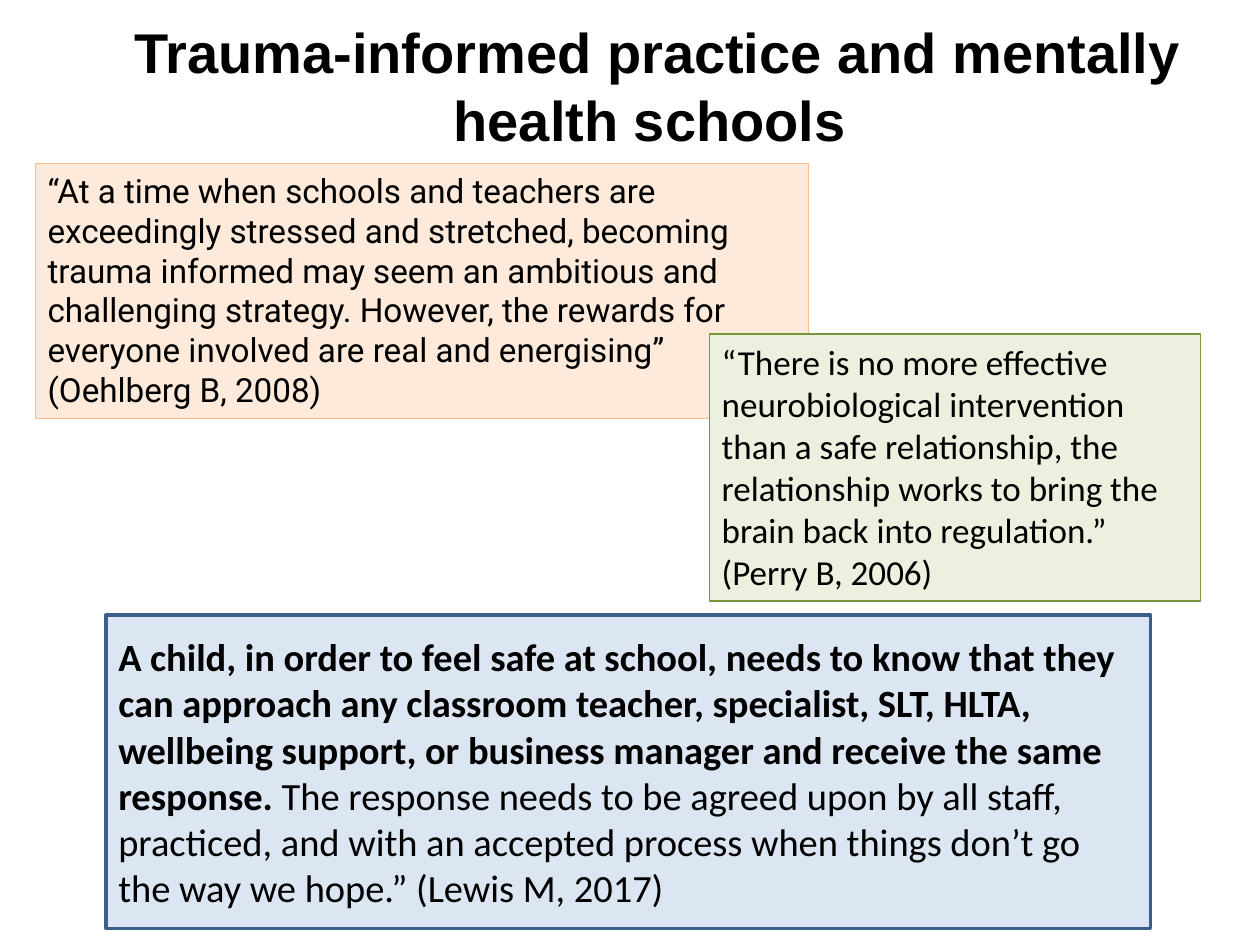
from pptx import Presentation
from pptx.dml.color import RGBColor
from pptx.enum.shapes import MSO_SHAPE
from pptx.enum.text import MSO_ANCHOR, PP_ALIGN
from pptx.util import Inches, Pt

RECTANGLE = MSO_SHAPE.RECTANGLE
TOP, MIDDLE = MSO_ANCHOR.TOP, MSO_ANCHOR.MIDDLE
LEFT, CENTER = PP_ALIGN.LEFT, PP_ALIGN.CENTER


def color(value):
    return RGBColor.from_string(value)


def write(box, paragraphs, font, size, align=LEFT, anchor=TOP):
    """Fill a box with paragraphs, each a list of (text, bold) spans."""
    frame = box.text_frame
    frame.word_wrap = True
    frame.vertical_anchor = anchor
    for index, spans in enumerate(paragraphs):
        para = frame.add_paragraph() if index else frame.paragraphs[0]
        para.alignment = align
        for text, bold in spans:
            span = para.add_run()
            span.text = text
            span.font.name = font
            span.font.size = Pt(size)
            span.font.bold = bold
            span.font.color.rgb = color("000000")


deck = Presentation()
deck.slide_width, deck.slide_height = Inches(10), Inches(7.5)
page = deck.slides.add_slide(deck.slide_layouts[6])

# Title
title = page.shapes.add_textbox(Inches(0.72), Inches(0.05), Inches(9), Inches(1.25))
write(title, [[("Trauma-informed practice and mentally health schools ", True)]],
      "Arial", 32, align=CENTER, anchor=MIDDLE)

# Quotations: position, fill, line, line width, font, size, anchor, paragraphs
quotes = [
    ((0.28, 1.3, 6.14, 2.02), "FDEADA", "FAC090", 0.75, "Roboto", 19, TOP, [
        [("“At a time when schools and teachers are exceedingly stressed and "
          "stretched, becoming trauma informed may seem an ambitious and "
          "challenging strategy. However, the rewards for everyone involved "
          "are real and energising”", False)],
        [("(Oehlberg B, 2008)", False)],
    ]),
    ((5.63, 2.65, 3.9, 2.12), "EBF1DE", "77933C", 0.75, "Calibri", 20, TOP, [
        [("“There is no more effective neurobiological intervention than a "
          "safe relationship, the relationship works to bring the brain back "
          "into regulation.” (Perry B, 2006)", False)],
    ]),
    ((0.84, 4.88, 8.29, 2.49), "DCE6F2", "3A5F8C", 2, "Calibri", 22, MIDDLE, [
        [("A child, in order to feel safe at school, needs to know that they "
          "can approach any classroom teacher, specialist, SLT, HLTA, "
          "wellbeing support, or business manager and receive the same "
          "response. ", True),
         ("The response needs to be agreed upon by all staff, practiced, and "
          "with an accepted process when things don’t go the way we hope.” "
          "(Lewis M, 2017)", False)],
    ]),
]
for position, fill, line, line_width, font, size, anchor, paragraphs in quotes:
    box = page.shapes.add_shape(RECTANGLE, *map(Inches, position))
    box.shadow.inherit = False
    box.fill.solid()
    box.fill.fore_color.rgb = color(fill)
    box.line.color.rgb = color(line)
    box.line.width = Pt(line_width)
    write(box, paragraphs, font, size, anchor=anchor)

deck.save("out.pptx")
